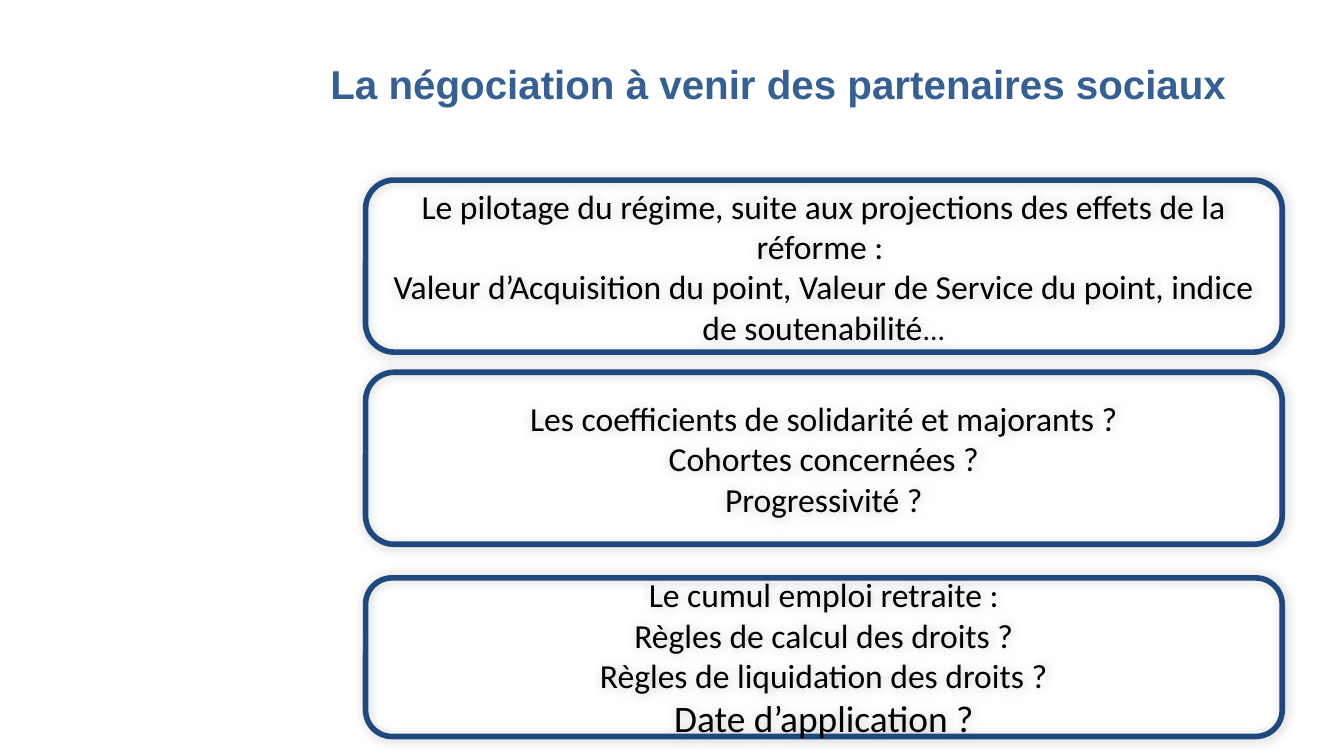
from lxml import etree
from pptx import Presentation
from pptx.dml.color import RGBColor
from pptx.enum.shapes import MSO_SHAPE
from pptx.enum.text import MSO_ANCHOR, PP_ALIGN
from pptx.oxml.ns import qn
from pptx.util import Inches, Pt

ROUNDED = MSO_SHAPE.ROUNDED_RECTANGLE
TOP, MIDDLE = MSO_ANCHOR.TOP, MSO_ANCHOR.MIDDLE
LEFT, CENTER = PP_ALIGN.LEFT, PP_ALIGN.CENTER

COLORS = {"title": "376092", "border": "1F497D", "text": "000000", "shadow": "000000"}
SLIDE_WIDTH = 10
SLIDE_HEIGHT = SLIDE_WIDTH * 9 / 16
BOX_LEFT, BOX_WIDTH = 2.72, 6.82
TITLE = "La négociation à venir des partenaires sociaux"
TOPICS = [
    (1.34, 1.28, [
        [("Le pilotage du régime, suite aux projections des effets de la réforme : ", 18)],
        [("Valeur d’Acquisition du point, Valeur de Service du point, "
          "indice de soutenabilité", 18), ("...", 16)],
    ]),
    (2.77, 1.28, [
        [("Les coefficients de solidarité et majorants ?", 18)],
        [("Cohortes concernées ?", 18)],
        [("Progressivité ?", 18)],
    ]),
    (4.3, 1.18, [
        [("Le cumul emploi retraite :", 18)],
        [("Règles de calcul des droits ?", 18)],
        [("Règles de liquidation des droits ?", 18)],
        [("Date d’application ?", 20)],
    ]),
]


def write_text(frame, paragraphs, font="Calibri", color="text", bold=False,
               align=CENTER, anchor=MIDDLE):
    frame.word_wrap = True
    frame.vertical_anchor = anchor
    for index, runs in enumerate(paragraphs):
        paragraph = frame.paragraphs[0] if index == 0 else frame.add_paragraph()
        paragraph.alignment = align
        for text, size in runs:
            run = paragraph.add_run()
            run.text = text
            run.font.name = font
            run.font.size = Pt(size)
            run.font.bold = bold
            run.font.color.rgb = RGBColor.from_string(COLORS[color])


class SlideBuilder:
    def __init__(self, presentation):
        self.slide = presentation.slides.add_slide(presentation.slide_layouts[6])

    def title(self, text, left, top, width, height):
        shape = self.slide.shapes.add_textbox(
            Inches(left), Inches(top), Inches(width), Inches(height))
        write_text(shape.text_frame, [[(text, 21.6)]], font="Arial", color="title",
                   bold=True, align=LEFT, anchor=TOP)

    def topic_box(self, top, height, paragraphs):
        shape = self.slide.shapes.add_shape(
            ROUNDED, Inches(BOX_LEFT), Inches(top), Inches(BOX_WIDTH), Inches(height))
        shape.fill.background()
        shape.line.color.rgb = RGBColor.from_string(COLORS["border"])
        shape.line.width = Pt(3)
        self.soft_shadow(shape)
        write_text(shape.text_frame, paragraphs)

    def soft_shadow(self, shape):
        shape.shadow.inherit = False
        effects = shape.element.spPr.find(qn("a:effectLst"))
        shadow = etree.SubElement(effects, qn("a:outerShdw"), blurRad=str(Pt(6)),
                                  dist="0", dir=str(315 * 60000), rotWithShape="0")
        color = etree.SubElement(shadow, qn("a:srgbClr"), val=COLORS["shadow"])
        etree.SubElement(color, qn("a:alpha"), val="20000")


def main():
    presentation = Presentation()
    presentation.slide_width = Inches(SLIDE_WIDTH)
    presentation.slide_height = Inches(SLIDE_HEIGHT)
    builder = SlideBuilder(presentation)
    builder.title(TITLE, 2.36, 0.39, 7.23, 0.77)
    for top, height, paragraphs in TOPICS:
        builder.topic_box(top, height, paragraphs)
    presentation.save("out.pptx")


if __name__ == "__main__":
    main()
